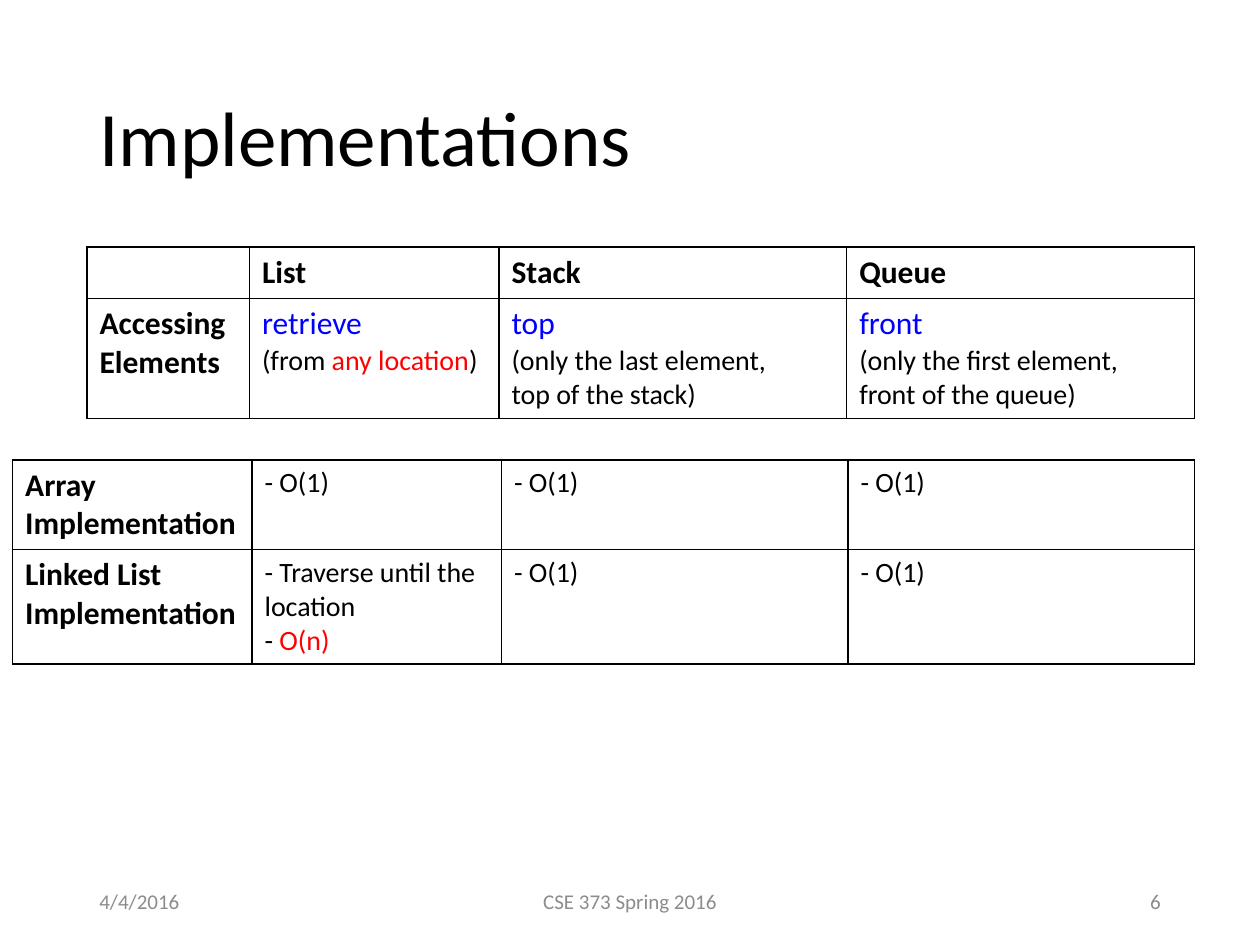
from pptx import Presentation
from pptx.dml.color import RGBColor
from pptx.enum import text as t
from pptx.oxml import parse_xml
from pptx.oxml.ns import nsdecls
from pptx.util import Inches, Pt

BLACK = RGBColor(0, 0, 0)
BLUE = RGBColor(0, 0, 255)
RED = RGBColor(255, 0, 0)
GRAY = RGBColor(0x8C, 0x8C, 0x8C)
FONT = "Calibri"


def style(run, size, color=BLACK, bold=False):
    font = run.font
    font.name = FONT
    font.size = Pt(size)
    font.bold = bold
    font.color.rgb = color


def label(slide, box, words, size, color, align=t.PP_ALIGN.LEFT):
    frame = slide.shapes.add_textbox(*map(Inches, box)).text_frame
    frame.word_wrap = True
    frame.vertical_anchor = t.MSO_ANCHOR.MIDDLE
    para = frame.paragraphs[0]
    para.text = words
    para.alignment = align
    style(para.runs[0], size, color)
    return para


def head(*lines):
    return [[(line, 18, BLACK, True)] for line in lines]


def body(*lines):
    return [[(line, 16)] for line in lines]


def verb(word):
    return [[(word, 18, BLUE)]]


def border(cell):
    props = cell._tc.get_or_add_tcPr()
    for spot, side in enumerate(("lnL", "lnR", "lnT", "lnB")):
        props.insert(spot, parse_xml(
            f'<a:{side} {nsdecls("a")} w="12700"><a:solidFill>'
            f'<a:srgbClr val="{BLACK}"/></a:solidFill></a:{side}>'))


def fill(cell, paras):
    cell.fill.background()
    border(cell)
    frame = cell.text_frame
    for i, parts in enumerate(paras):
        para = frame.add_paragraph() if i else frame.paragraphs[0]
        for words, *look in parts:
            run = para.add_run()
            run.text = words
            style(run, *look)


def grid(slide, left, top, widths, heights, rows):
    size = map(Inches, (left, top, sum(widths), sum(heights)))
    table = slide.shapes.add_table(len(rows), len(widths), *size).table
    table.first_row = table.horz_banding = False
    for col, width in zip(table.columns, widths):
        col.width = Inches(width)
    for row, height, cells in zip(table.rows, heights, rows):
        row.height = Inches(height)
        for cell, paras in zip(row.cells, cells):
            fill(cell, paras)


def main():
    deck = Presentation()
    deck.slide_width, deck.slide_height = Inches(10), Inches(7.5)
    slide = deck.slides.add_slide(deck.slide_layouts[6])

    title = label(slide, (0.69, 0.4, 8.62, 1.45), "Implementations", 44, BLACK)
    title.line_spacing = 0.9

    place = [("(from ", 16), ("any location", 16, RED), (")", 16)]
    grid(slide, 0.69, 1.96, (1.29, 1.98, 2.76, 2.76), (0.41, 0.95), [
        [[], head("List"), head("Stack"), head("Queue")],
        [head("Accessing Elements"),
         verb("retrieve") + [place],
         verb("top") + body("(only the last element,", "top of the stack)"),
         verb("front") + body("(only the first element,",
                              "front of the queue)")],
    ])

    fast = body("- O(1)")
    slow = body("- Traverse until the location")
    slow.append([("- ", 16), ("O(n)", 16, RED)])
    grid(slide, 0.1, 3.65, (1.9, 1.98, 2.75, 2.75), (0.71, 0.91), [
        [head("Array Implementation"), fast, fast, fast],
        [head("Linked List", "Implementation"), slow, fast, fast],
    ])

    for left, width, words, align in (
            (0.69, 2.25, "4/4/2016", t.PP_ALIGN.LEFT),
            (7.06, 2.25, "6", t.PP_ALIGN.RIGHT),
            (3.31, 3.38, "CSE 373 Spring 2016", t.PP_ALIGN.CENTER)):
        label(slide, (left, 6.95, width, 0.4), words, 12, GRAY, align)

    deck.save("out.pptx")


if __name__ == "__main__":
    main()
